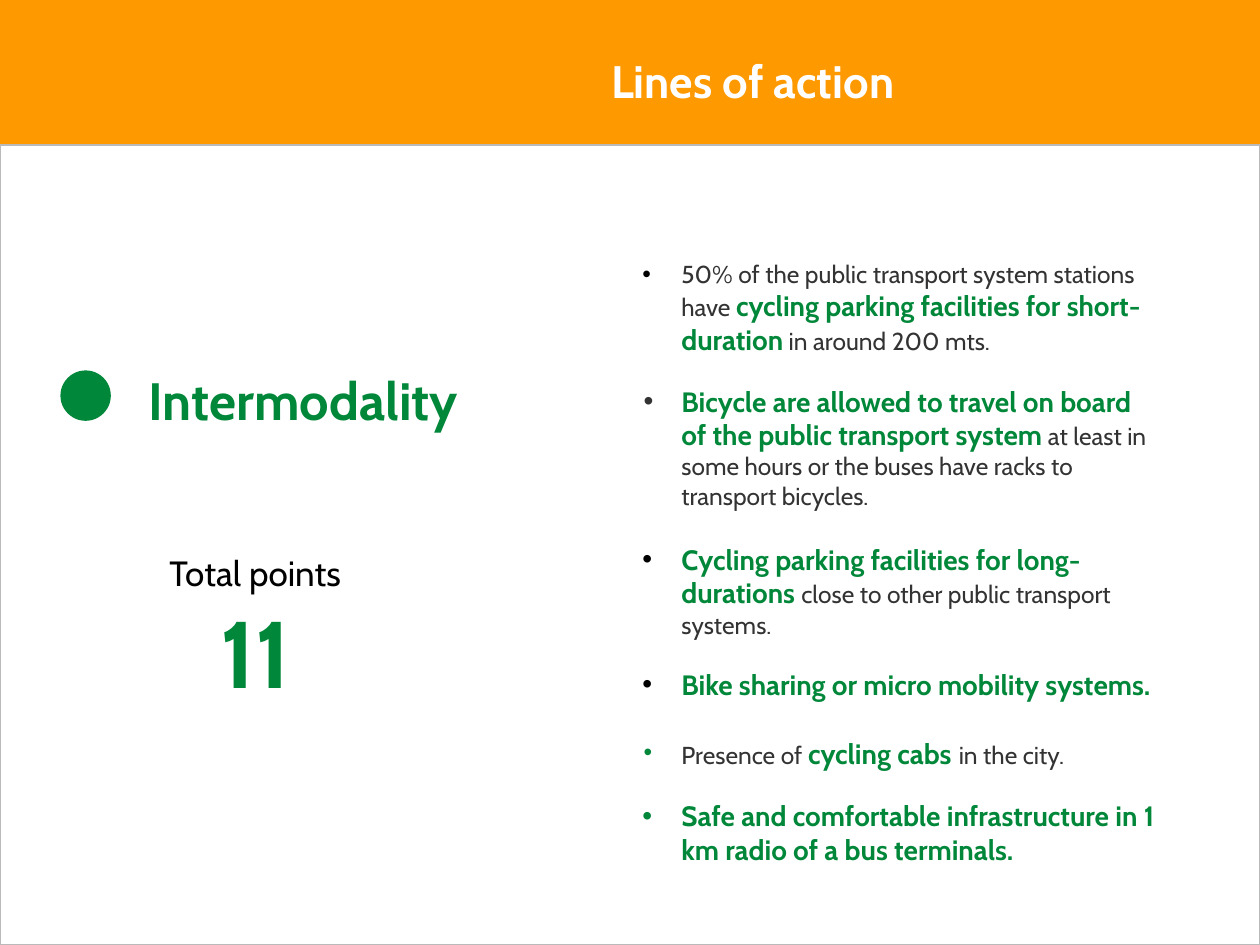
from lxml.etree import SubElement
from pptx import Presentation
from pptx.dml.color import RGBColor
from pptx.enum.shapes import MSO_SHAPE
from pptx.enum.text import MSO_AUTO_SIZE, PP_ALIGN
from pptx.oxml.ns import qn
from pptx.util import Inches, Pt

COLORS = {
    "orange": "FF9900",
    "white": "FFFFFF",
    "border": "BABABA",
    "green": "008739",
    "gray": "333333",
    "black": "000000",
}
FONT = "Cabin"
PLAIN = {"size": Pt(14), "bold": False, "color": "gray"}
STRONG = {"size": Pt(16), "bold": True, "color": "green"}
WIDE_SPACE = {"size": Pt(18), "bold": True, "color": "gray"}
SMALL_GAP, LARGE_GAP = 16.1, 18.4

ACTIONS = [
    ("black", 0.31, 0, [
        ("50% of the public transport system stations have ", PLAIN),
        ("cycling parking facilities for short-duration", STRONG),
        (" in around 200 mts.", PLAIN),
    ]),
    ("gray", 0.3, SMALL_GAP, [
        ("Bicycle are allowed to travel on board of the public transport system", STRONG),
        (" at least in some hours or the buses have racks to transport bicycles.", PLAIN),
    ]),
    ("black", 0.31, LARGE_GAP, [
        ("Cycling parking facilities for long-durations ", STRONG),
        ("close to other public transport systems.", PLAIN),
    ]),
    ("black", 0.31, SMALL_GAP, [("Bike sharing or micro mobility systems.", STRONG)]),
    ("green", 0.3, LARGE_GAP, [
        ("Presence of ", PLAIN),
        ("cycling cabs", STRONG),
        (" ", WIDE_SPACE),
        ("in the city.", PLAIN),
    ]),
    ("green", 0.31, SMALL_GAP, [
        ("Safe and comfortable infrastructure in 1 km radio of a bus terminals.", STRONG),
    ]),
]


def color(name):
    return RGBColor.from_string(COLORS[name])


def add_filled_shape(slide, kind, box, fill, line=None):
    shape = slide.shapes.add_shape(kind, *map(Inches, box))
    shape.shadow.inherit = False
    shape.fill.solid()
    shape.fill.fore_color.rgb = color(fill)
    if line:
        shape.line.color.rgb = color(line)
        shape.line.width = Pt(1)
    else:
        shape.line.fill.background()


def add_text_frame(slide, box, vertical_inset=0.05):
    text_frame = slide.shapes.add_textbox(*map(Inches, box)).text_frame
    settings = {
        "word_wrap": True,
        "auto_size": MSO_AUTO_SIZE.NONE,
        "margin_left": Inches(0.1),
        "margin_right": Inches(0.1),
        "margin_top": Inches(vertical_inset),
        "margin_bottom": Inches(vertical_inset),
    }
    for name, value in settings.items():
        setattr(text_frame, name, value)
    return text_frame


def add_run(paragraph, text, style):
    run = paragraph.add_run()
    run.text = text
    run.font.name = FONT
    for name, value in style.items():
        if name == "color":
            run.font.color.rgb = color(value)
        else:
            setattr(run.font, name, value)


def add_bullet(paragraph, color_name, hanging):
    properties = paragraph._p.get_or_add_pPr()
    properties.set("marL", str(Inches(0.31)))
    properties.set("indent", str(-Inches(hanging)))
    bullet_color = SubElement(properties, qn("a:buClr"))
    SubElement(bullet_color, qn("a:srgbClr"), val=COLORS[color_name])
    SubElement(properties, qn("a:buFont"), typeface="Arial")
    SubElement(properties, qn("a:buChar"), char="•")


def add_background(slide, left, top, width, height):
    add_filled_shape(slide, MSO_SHAPE.RECTANGLE, (left, top - 0.03, width, height + 0.03), "orange")
    add_filled_shape(
        slide, MSO_SHAPE.RECTANGLE, (left, top + 1.15, width, height - 1.15), "white", "border"
    )


def add_title(slide, left, top, width, height):
    paragraph = add_text_frame(slide, (left, top, width, height)).paragraphs[0]
    paragraph.alignment = PP_ALIGN.CENTER
    add_run(paragraph, "Lines of action", {"size": Pt(26), "bold": True, "color": "white"})


def add_topic(slide, left, top, width, height):
    text_frame = add_text_frame(slide, (left + 0.6, top, width - 0.6, height), 0.1)
    paragraph = text_frame.paragraphs[0]
    paragraph.line_spacing = 1.2
    add_run(paragraph, "Intermodality", {"size": Pt(30), "bold": True, "color": "green"})
    add_filled_shape(slide, MSO_SHAPE.OVAL, (left, top + 0.22, 0.4, 0.4), "green")


def add_score(slide, left, top, width, height):
    text_frame = add_text_frame(slide, (left, top, width, height))
    label, score = text_frame.paragraphs[0], text_frame.add_paragraph()
    for paragraph in (label, score):
        paragraph.alignment = PP_ALIGN.CENTER
    add_run(label, "Total points", {"size": Pt(20), "color": "black"})
    add_run(score, "11", {"size": Pt(54), "bold": True, "color": "green"})


def add_actions(slide, left, top, width, height):
    text_frame = add_text_frame(slide, (left, top, width, height))
    for index, (bullet_color, hanging, gap, runs) in enumerate(ACTIONS):
        paragraph = text_frame.add_paragraph() if index else text_frame.paragraphs[0]
        add_bullet(paragraph, bullet_color, hanging)
        paragraph.space_before = Pt(gap)
        for text, style in runs:
            add_run(paragraph, text, style)


def main():
    presentation = Presentation()
    presentation.slide_width = Inches(10)
    presentation.slide_height = Inches(7.5)
    slide = presentation.slides.add_slide(presentation.slide_layouts[6])
    add_background(slide, 0, 0, 10, 7.5)
    add_actions(slide, 5, 2.01, 4.27, 4.93)
    add_title(slide, 1.95, 0.37, 8.05, 0.54)
    add_topic(slide, 0.48, 2.72, 3.79, 1.24)
    add_score(slide, 0.89, 4.33, 2.27, 1.35)
    presentation.save("out.pptx")


if __name__ == "__main__":
    main()
